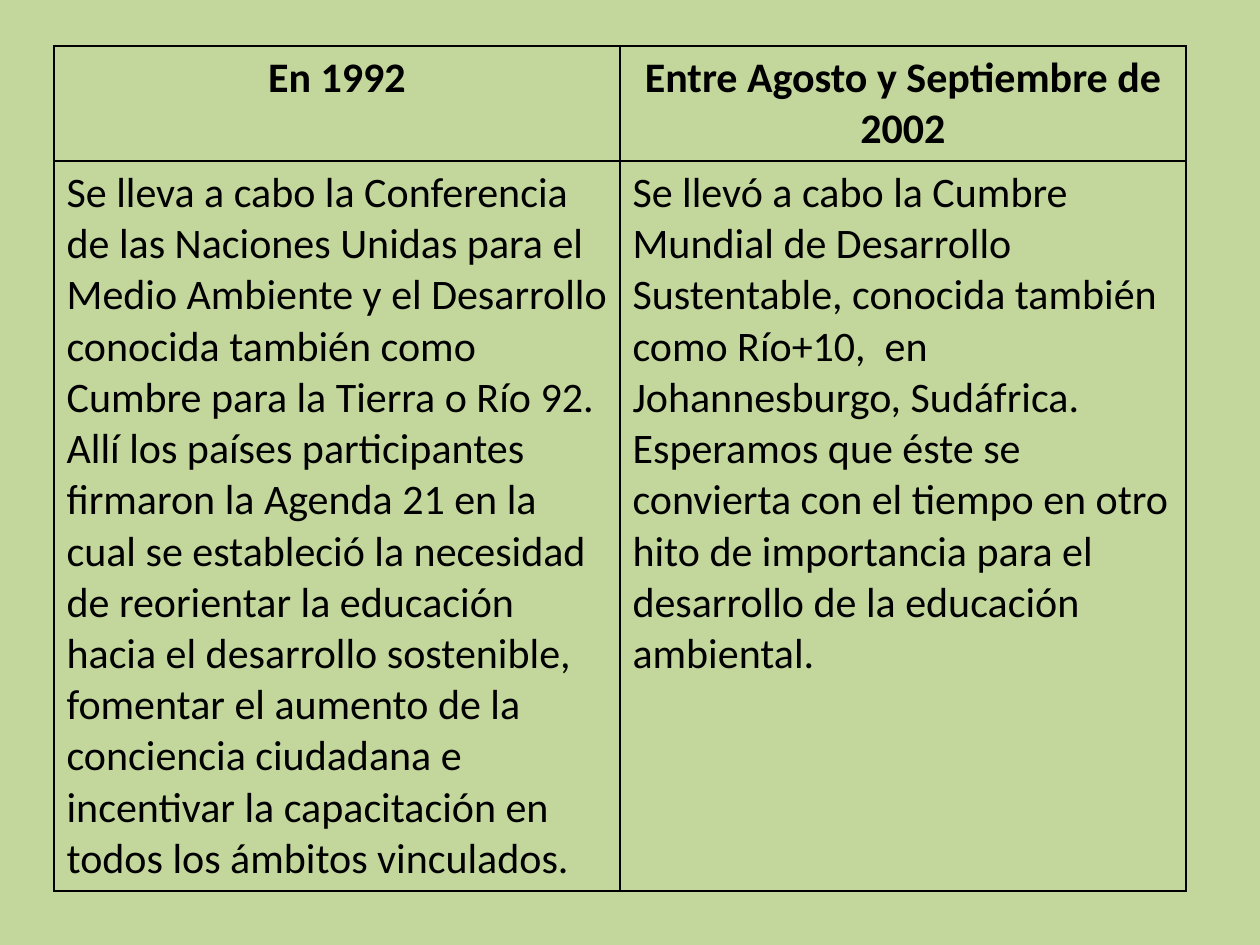
from pptx import Presentation
from pptx.dml.color import RGBColor
from pptx.enum.text import PP_ALIGN
from pptx.oxml import parse_xml
from pptx.oxml.ns import nsdecls
from pptx.util import Emu, Pt

PX = 914400 // 126
LEFT, CENTER = PP_ALIGN.LEFT, PP_ALIGN.CENTER
GREEN = RGBColor(0xC3, 0xD6, 0x9B)
BLACK = RGBColor(0x00, 0x00, 0x00)

HEADERS = ["En 1992", "Entre Agosto y Septiembre de 2002"]
BODIES = [
    "Se lleva a cabo la Conferencia de las Naciones Unidas para el Medio "
    "Ambiente y el Desarrollo conocida también como Cumbre para la Tierra o "
    "Río 92. Allí los países participantes firmaron la Agenda 21 en la cual "
    "se estableció la necesidad de reorientar la educación hacia el "
    "desarrollo sostenible, fomentar el aumento de la conciencia ciudadana e "
    "incentivar la capacitación en todos los ámbitos vinculados.",
    "Se llevó a cabo la Cumbre Mundial de Desarrollo Sustentable, conocida "
    "también como Río+10,  en Johannesburgo, Sudáfrica. Esperamos que éste "
    "se convierta con el tiempo en otro hito de importancia para el "
    "desarrollo de la educación ambiental.",
]


def px(n):
    return Emu(n * PX)


def write(tf, text, size=24, bold=False, color=BLACK, font="Calibri", align=LEFT):
    p = tf.paragraphs[0]
    p.alignment = align
    r = p.add_run()
    r.text = text
    r.font.name = font
    r.font.size = Pt(size)
    r.font.bold = bold
    r.font.color.rgb = color


class Deck:
    """Holds the style and the current slide."""

    line_color = BLACK
    line_width = Pt(1)

    def __init__(self, prs, background):
        self.s = prs.slides.add_slide(prs.slide_layouts[6])
        fill = self.s.background.fill
        fill.solid()
        fill.fore_color.rgb = background

    def border(self, cell):
        tcPr = cell._tc.get_or_add_tcPr()
        for side in "LRTB":
            tcPr.append(parse_xml(
                f'<a:ln{side} {nsdecls("a")} w="{self.line_width}"><a:solidFill>'
                f'<a:srgbClr val="{self.line_color}"/></a:solidFill></a:ln{side}>'))

    def table(self, rows, x, y, widths, heights):
        table = self.s.shapes.add_table(
            len(heights), len(widths), px(x), px(y),
            px(sum(widths)), px(sum(heights))).table
        table.horz_banding = False
        table.first_row = False
        for col, width in zip(table.columns, widths):
            col.width = px(width)
        for i, (row, height, texts) in enumerate(zip(table.rows, heights, rows)):
            row.height = px(height)
            for cell, text in zip(row.cells, texts):
                self.border(cell)
                cell.fill.background()
                header = i == 0
                write(cell.text_frame, text, bold=header,
                      align=CENTER if header else LEFT)


def main():
    prs = Presentation()
    prs.slide_width, prs.slide_height = px(1260), px(945)
    deck = Deck(prs, GREEN)

    # Two milestones side by side
    deck.table([HEADERS, BODIES], x=54, y=46, widths=[566, 566], heights=[115, 730])

    prs.save("out.pptx")


if __name__ == "__main__":
    main()
